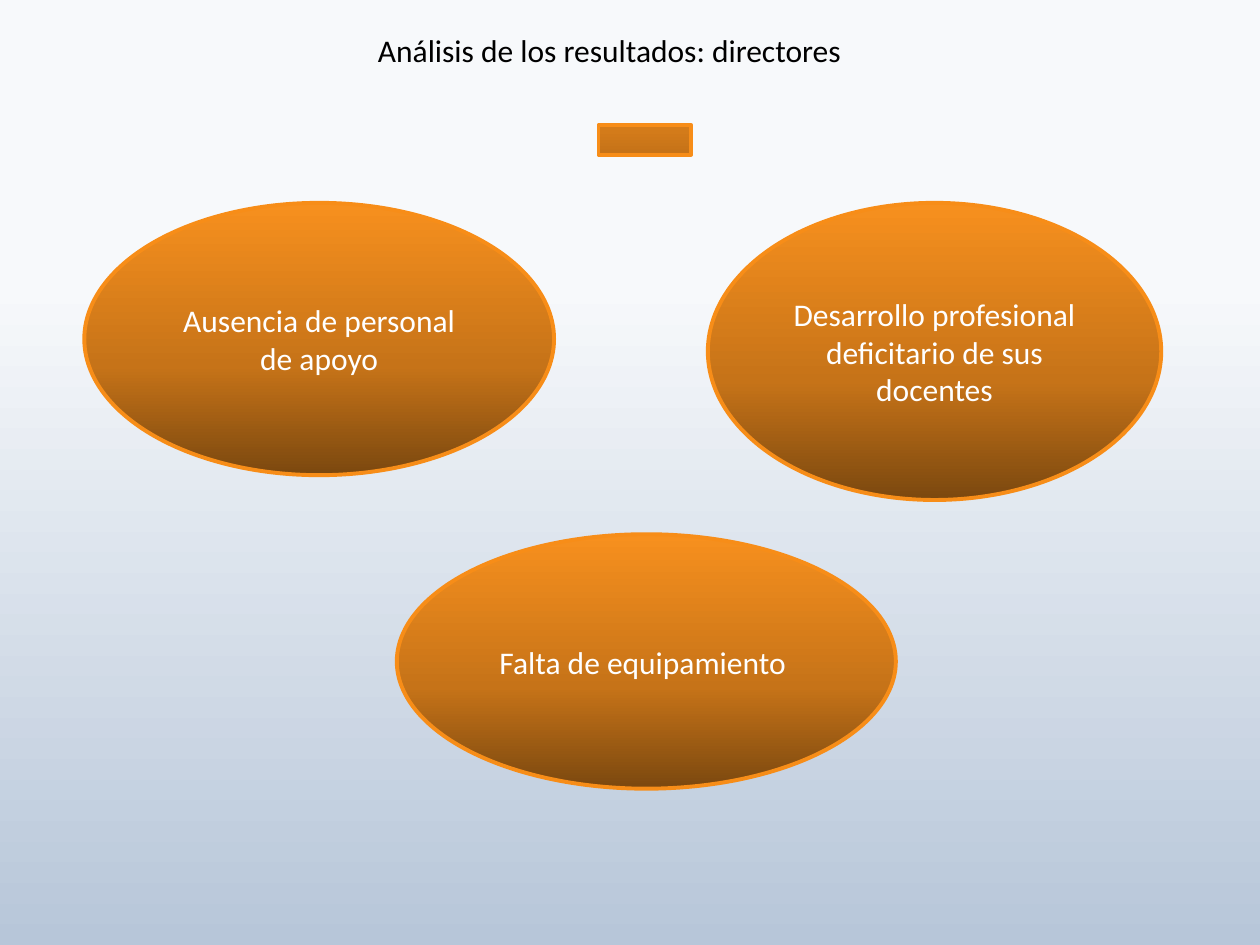
"""Build a slide on the results found among school directors."""
import pptx
import pptx.dml.color
import pptx.enum.shapes
import pptx.enum.text
import pptx.oxml.ns
import pptx.util
from lxml import etree

Cm = pptx.util.Cm
RGB = pptx.dml.color.RGBColor
SHAPE = pptx.enum.shapes.MSO_SHAPE
ALIGN = pptx.enum.text.PP_ALIGN
ANCHOR = pptx.enum.text.MSO_ANCHOR
qn = pptx.oxml.ns.qn

WHITE = RGB(0xFF, 0xFF, 0xFF)
BLACK = RGB(0x00, 0x00, 0x00)
EDGE = RGB(0xF7, 0x8D, 0x18)
ORANGE = [(0, RGB(0xF7, 0x90, 0x1E)), (60, RGB(0xC6, 0x73, 0x18)),
          (100, RGB(0x7B, 0x48, 0x0F))]
SKY = [(30, RGB(0xF7, 0xF9, 0xFB)), (100, RGB(0xB7, 0xC6, 0xD9))]

OVALS = [
    ("Ausencia de personal de apoyo", (1.7, 4.09, 9.47, 5.49)),
    ("Falta de equipamiento ", (8, 10.77, 10.06, 5.13)),
    ("Desarrollo profesional deficitario de sus docentes",
     (14.27, 4.09, 9.14, 5.99)),
]


def shade(fill, stops):
    fill.gradient()
    fill.gradient_angle = 270
    ramp = fill._xPr.find(qn("a:gradFill")).find(qn("a:gsLst"))
    for old in list(ramp):
        ramp.remove(old)
    for place, color in stops:
        stop = etree.SubElement(ramp, qn("a:gs"), pos=str(place * 1000))
        etree.SubElement(stop, qn("a:srgbClr"), val=str(color))


def write(frame, text, color=WHITE, size=18, align=ALIGN.CENTER,
          anchor=ANCHOR.MIDDLE, wrap=True):
    frame.word_wrap = wrap
    frame.vertical_anchor = anchor
    para = frame.paragraphs[0]
    para.alignment = align
    run = para.add_run()
    run.text = text
    run.font.name = "Calibri"
    run.font.size = pptx.util.Pt(size)
    run.font.color.rgb = color


def add_form(slide, kind, box):
    form = slide.shapes.add_shape(kind, *map(Cm, box))
    form.shadow.inherit = False
    shade(form.fill, ORANGE)
    form.line.color.rgb = EDGE
    form.line.width = pptx.util.Pt(2.25)
    return form


def add_title(slide, text, box):
    frame = slide.shapes.add_textbox(*map(Cm, box)).text_frame
    write(frame, text, color=BLACK, align=ALIGN.LEFT, anchor=ANCHOR.TOP,
          wrap=False)
    frame.auto_size = pptx.enum.text.MSO_AUTO_SIZE.SHAPE_TO_FIT_TEXT


def main():
    deck = pptx.Presentation()
    deck.slide_width, deck.slide_height = Cm(25.4), Cm(19.05)
    slide = deck.slides.add_slide(deck.slide_layouts[6])
    shade(slide.background.fill, SKY)
    add_title(slide, "Análisis de los resultados: directores",
              (7.37, 0.51, 10.06, 1.02))
    for text, box in OVALS:
        write(add_form(slide, SHAPE.OVAL, box).text_frame, text)
    add_form(slide, SHAPE.MATH_MINUS, (11.73, 1.55, 2.54, 2.54))
    deck.save("out.pptx")


if __name__ == "__main__":
    main()
